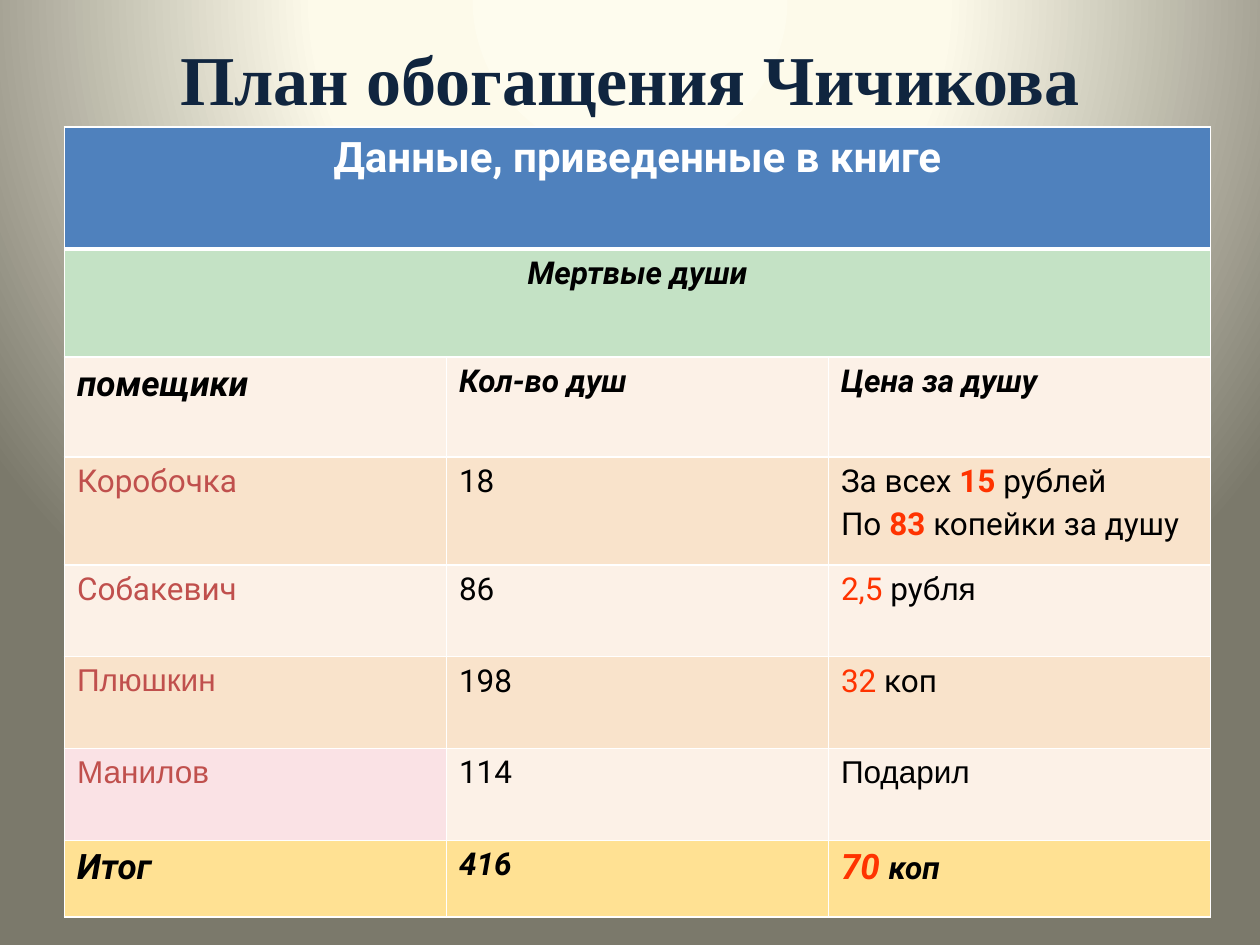
"""Slide with the table of Chichikov's enrichment plan."""
from lxml.etree import SubElement
from pptx import Presentation
from pptx.dml.color import RGBColor
from pptx.enum.text import MSO_ANCHOR as Anchor, PP_ALIGN as Align
from pptx.oxml.ns import qn
from pptx.util import Cm, Pt

WHITE = RGBColor(0xFF, 0xFF, 0xFF)
BLACK = RGBColor(0x00, 0x00, 0x00)
NAVY = RGBColor(0x10, 0x25, 0x3F)
BLUE = RGBColor(0x4F, 0x81, 0xBD)
GREEN = RGBColor(0xC4, 0xE2, 0xC5)
CREAM = RGBColor(0xFC, 0xF1, 0xE7)
PEACH = RGBColor(0xF9, 0xE3, 0xCB)
PINK = RGBColor(0xFA, 0xE2, 0xE5)
GOLD = RGBColor(0xFF, 0xE1, 0x93)
BRICK = RGBColor(0xC0, 0x50, 0x4D)
RED = RGBColor(0xFF, 0x33, 0x00)
GLOW = [(0, RGBColor(0xFE, 0xFC, 0xEE)), (40, RGBColor(0xFD, 0xFA, 0xEA)),
        (100, RGBColor(0x7B, 0x79, 0x6B))]

PLAIN = dict(name="Roboto", size=Pt(18), bold=False, italic=False, color=BLACK)
ARIAL = PLAIN | dict(name="Arial")
OWNER = PLAIN | dict(color=BRICK)
OWNER_ARIAL = OWNER | dict(name="Arial")
PRICE = PLAIN | dict(color=RED)
PRICE_BOLD = PRICE | dict(bold=True)
LABEL = PLAIN | dict(bold=True, italic=True)
LABEL_BIG = LABEL | dict(size=Pt(20))
TOTAL_PRICE = LABEL_BIG | dict(color=RED)
HEADING = PLAIN | dict(size=Pt(24), bold=True, color=WHITE)
TITLE = dict(name="Times New Roman", size=Pt(40), bold=True, italic=False, color=NAVY)


def add_run(paragraph, text, style):
    run = paragraph.add_run()
    run.text = text
    for attribute, value in style.items():
        if attribute == "color":
            run.font.color.rgb = value
        else:
            setattr(run.font, attribute, value)


def add_border(cell, side, width):
    line = SubElement(cell._tc.get_or_add_tcPr(), qn(f"a:{side}"), w=str(Pt(width)))
    SubElement(SubElement(line, qn("a:solidFill")), qn("a:srgbClr"), val=str(WHITE))


ROWS = [
    (2.46, BLUE, [[[("Данные, приведенные в книге", HEADING)]]]),
    (2.18, GREEN, [[[("Мертвые души", LABEL)]]]),
    (2.01, CREAM, [[[("помещики", LABEL_BIG)]], [[("Кол-во душ", LABEL)]],
                   [[("Цена за душу", LABEL)]]]),
    (2.18, PEACH, [[[("Коробочка", OWNER)]], [[("18", PLAIN)]],
                   [[("За всех ", PLAIN), ("15", PRICE_BOLD), (" рублей", PLAIN)],
                    [("По ", PLAIN), ("83 ", PRICE_BOLD), ("копейки за душу", PLAIN)]]]),
    (1.85, CREAM, [[[("Собакевич", OWNER)]], [[("86", PLAIN)]],
                   [[("2,5", PRICE), (" руб", PLAIN), ("ля", ARIAL)]]]),
    (1.85, PEACH, [[[("Плюшкин", OWNER_ARIAL)]], [[("198", PLAIN)]],
                   [[("32", PRICE), (" коп", PLAIN)]]]),
    (1.85, CREAM, [[[("Манилов", OWNER_ARIAL)]], [[("114", PLAIN)]],
                   [[("Подарил", ARIAL)]]]),
    (1.55, GOLD, [[[("Итог", LABEL_BIG)]], [[("416", LABEL)]],
                  [[("70 ", TOTAL_PRICE), ("коп", LABEL)]]]),
]

deck = Presentation()
deck.slide_width, deck.slide_height = Cm(25.4), Cm(19.05)
slide = deck.slides.add_slide(deck.slide_layouts[5])

slide.background.fill.gradient()
gradient = slide.element.find(".//" + qn("a:gradFill"))
for child in list(gradient):
    gradient.remove(child)
stops = SubElement(gradient, qn("a:gsLst"))
for position, color in GLOW:
    stop = SubElement(stops, qn("a:gs"), pos=str(position * 1000))
    SubElement(stop, qn("a:srgbClr"), val=str(color))
glow_path = SubElement(gradient, qn("a:path"), path="circle")
SubElement(glow_path, qn("a:fillToRect"), l="50000", t="-80000", r="50000", b="180000")

plan = slide.shapes.add_table(len(ROWS), 3, Cm(1.3), Cm(2.56), Cm(23.1), Cm(15.93)).table
for column in plan.columns:
    column.width = Cm(7.7)

for row_index, (height, row_fill, row_cells) in enumerate(ROWS):
    plan.rows[row_index].height = Cm(height)
    for cell in plan.rows[row_index].cells:
        for side in ("lnL", "lnR", "lnT", "lnB"):
            thick = (row_index, side) in ((0, "lnB"), (1, "lnT"))
            add_border(cell, side, 3 if thick else 1)
        cell.fill.solid()
        cell.fill.fore_color.rgb = row_fill
    spanning = len(row_cells) == 1
    if spanning:
        plan.cell(row_index, 0).merge(plan.cell(row_index, 2))
    for column_index, paragraphs in enumerate(row_cells):
        frame = plan.cell(row_index, column_index).text_frame
        for number, runs in enumerate(paragraphs):
            paragraph = frame.add_paragraph() if number else frame.paragraphs[0]
            paragraph.alignment = Align.CENTER if spanning else Align.LEFT
            paragraph.space_before = Pt(runs[0][1]["size"].pt * 0.2)
            for text, style in runs:
                add_run(paragraph, text, style)

plan.cell(6, 0).fill.fore_color.rgb = PINK

title = slide.shapes.title
title.left, title.top, title.width, title.height = Cm(0), Cm(0.58), Cm(25.4), Cm(1.96)
title.text_frame.vertical_anchor = Anchor.MIDDLE
title.text_frame.paragraphs[0].alignment = Align.CENTER
add_run(title.text_frame.paragraphs[0], "План обогащения Чичикова", TITLE)

deck.save("out.pptx")
